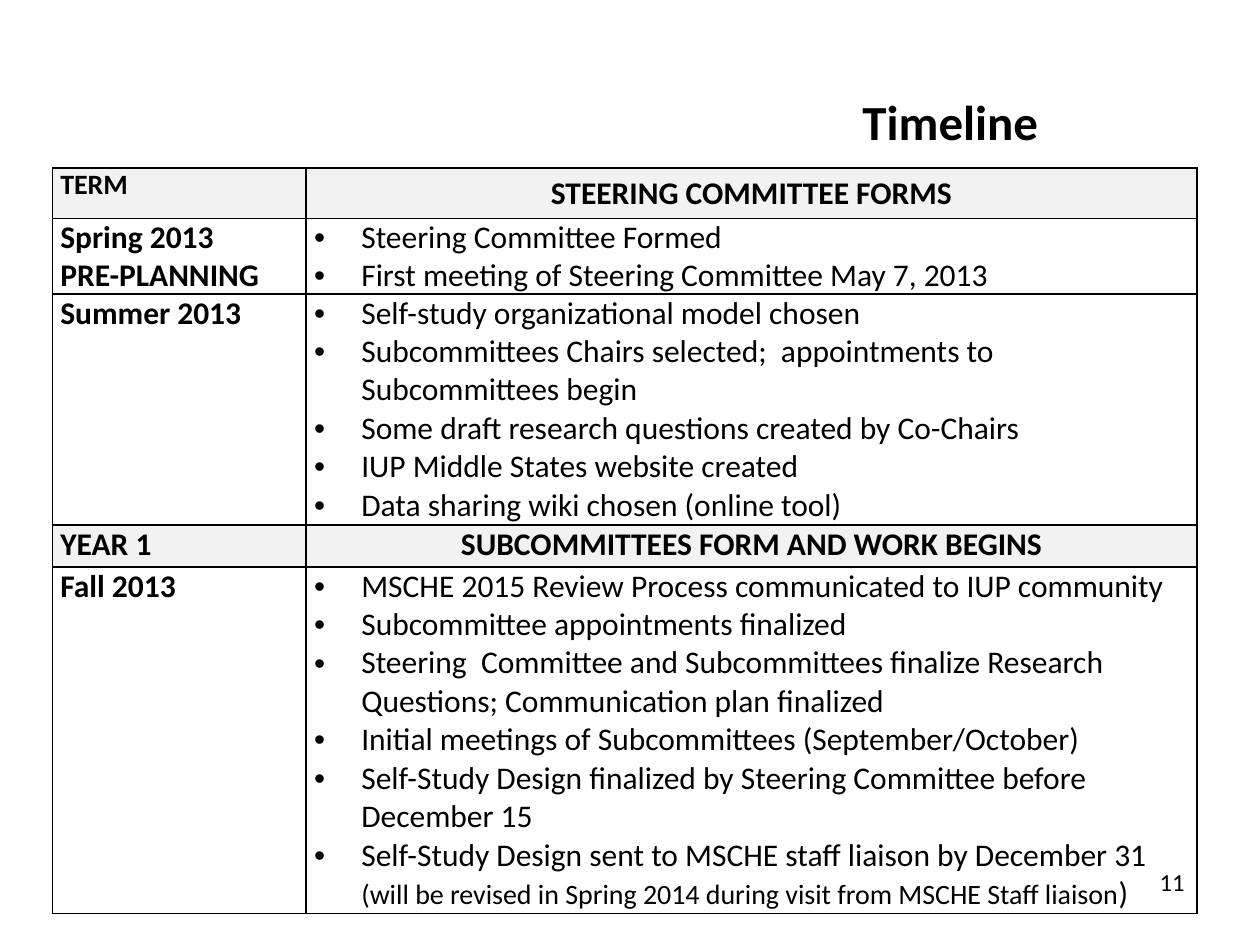
from dataclasses import dataclass

from lxml import etree
from pptx import Presentation
from pptx.dml.color import RGBColor
from pptx.enum.text import MSO_ANCHOR, PP_ALIGN
from pptx.oxml.ns import qn
from pptx.util import Pt

LEFT, CENTER, RIGHT = PP_ALIGN.LEFT, PP_ALIGN.CENTER, PP_ALIGN.RIGHT
TOP, MIDDLE = MSO_ANCHOR.TOP, MSO_ANCHOR.MIDDLE


@dataclass(frozen=True)
class Theme:
    font: str = "Calibri"
    ink: RGBColor = RGBColor(0, 0, 0)
    band: RGBColor = RGBColor(0xF2, 0xF2, 0xF2)
    title: int = 28
    body: int = 18
    small: int = 16
    page_number: int = 14


THEME = Theme()
COLUMN_WIDTHS = (145, 509)
ROW_HEIGHTS = (28.8, 43.2, 132, 24, 198)
BULLET_INDENT = 27

# Term lines, then either a section heading or a list of activities.
TIMELINE = [
    (["TERM"], "STEERING COMMITTEE FORMS"),
    (["Spring 2013", "PRE-PLANNING"], [
        "Steering Committee Formed",
        "First meeting of Steering Committee May 7, 2013",
    ]),
    (["Summer 2013"], [
        "Self-study organizational model chosen",
        "Subcommittees Chairs selected;  appointments to Subcommittees begin",
        "Some draft research questions created by Co-Chairs",
        "IUP Middle States website created",
        "Data sharing wiki chosen (online tool)",
    ]),
    (["YEAR 1"], "SUBCOMMITTEES FORM AND WORK BEGINS"),
    (["Fall 2013"], [
        "MSCHE 2015 Review Process communicated to IUP community",
        "Subcommittee appointments finalized",
        "Steering  Committee and Subcommittees finalize Research Questions; "
        "Communication plan finalized",
        "Initial meetings of Subcommittees (September/October)",
        "Self-Study Design finalized by Steering Committee before December 15",
        [("Self-Study Design sent to MSCHE staff liaison by December 31 ", THEME.body),
         ("(will be revised in Spring 2014 during visit from MSCHE Staff liaison", THEME.small),
         (")", THEME.body)],
    ]),
]


def add_span(para, text, size, bold=False):
    span = para.add_run()
    span.text = text
    span.font.name = THEME.font
    span.font.size = Pt(size)
    span.font.bold = bold
    span.font.color.rgb = THEME.ink


def add_bullet(para):
    properties = para._p.get_or_add_pPr()
    properties.set("marL", str(Pt(BULLET_INDENT)))
    properties.set("indent", str(-Pt(BULLET_INDENT)))
    etree.SubElement(properties, qn("a:buFont"), typeface="Arial")
    etree.SubElement(properties, qn("a:buChar"), char="•")


def write_paragraphs(frame, items, size, bold=False, align=LEFT, bulleted=False):
    """Write one paragraph per item: a string, or a list of (text, size) runs."""
    for index, item in enumerate(items):
        para = frame.add_paragraph() if index else frame.paragraphs[0]
        para.alignment = align
        if bulleted:
            add_bullet(para)
        for text, span_size in [(item, size)] if isinstance(item, str) else item:
            add_span(para, text, span_size, bold)


def add_text_box(page, place, text, size, bold=False, align=LEFT, anchor=TOP):
    box = page.shapes.add_textbox(*map(Pt, place))
    frame = box.text_frame
    frame.word_wrap = True
    frame.vertical_anchor = anchor
    write_paragraphs(frame, [text], size, bold, align)


def add_borders(cell):
    properties = cell._tc.get_or_add_tcPr()
    for side in ("lnL", "lnR", "lnT", "lnB"):
        line = etree.SubElement(properties, qn(f"a:{side}"), w=str(Pt(1)))
        fill = etree.SubElement(line, qn("a:solidFill"))
        etree.SubElement(fill, qn("a:srgbClr"), val=str(THEME.ink))


def style_cell(cell, shaded):
    cell.margin_left = cell.margin_right = Pt(4.5)
    cell.margin_top = cell.margin_bottom = 0
    add_borders(cell)
    if shaded:
        cell.fill.solid()
        cell.fill.fore_color.rgb = THEME.band
    else:
        cell.fill.background()


def add_timeline(page, left, top):
    table = page.shapes.add_table(
        len(TIMELINE), len(COLUMN_WIDTHS), Pt(left), Pt(top),
        Pt(sum(COLUMN_WIDTHS)), Pt(sum(ROW_HEIGHTS))).table
    table.first_row = table.horz_banding = False
    for column, width in zip(table.columns, COLUMN_WIDTHS):
        column.width = Pt(width)
    for index, (terms, content) in enumerate(TIMELINE):
        table.rows[index].height = Pt(ROW_HEIGHTS[index])
        term_cell, content_cell = table.rows[index].cells
        is_heading = isinstance(content, str)
        style_cell(term_cell, is_heading)
        style_cell(content_cell, is_heading)
        term_size = THEME.body if index else THEME.small
        write_paragraphs(term_cell.text_frame, terms, term_size, bold=True)
        if is_heading:
            write_paragraphs(content_cell.text_frame, [content], THEME.body, True, CENTER)
        else:
            write_paragraphs(content_cell.text_frame, content, THEME.body, bulleted=True)
    table.cell(0, 1).vertical_anchor = MIDDLE


def main():
    deck = Presentation()
    deck.slide_width, deck.slide_height = Pt(720), Pt(540)
    page = deck.slides.add_slide(deck.slide_layouts[6])
    add_text_box(page, (444, 54, 198, 30), "Timeline", THEME.title, True, CENTER, MIDDLE)
    add_timeline(page, 30, 96)
    add_text_box(page, (516, 492, 168, 37.5), "11", THEME.page_number, align=RIGHT)
    deck.save("out.pptx")


if __name__ == "__main__":
    main()
